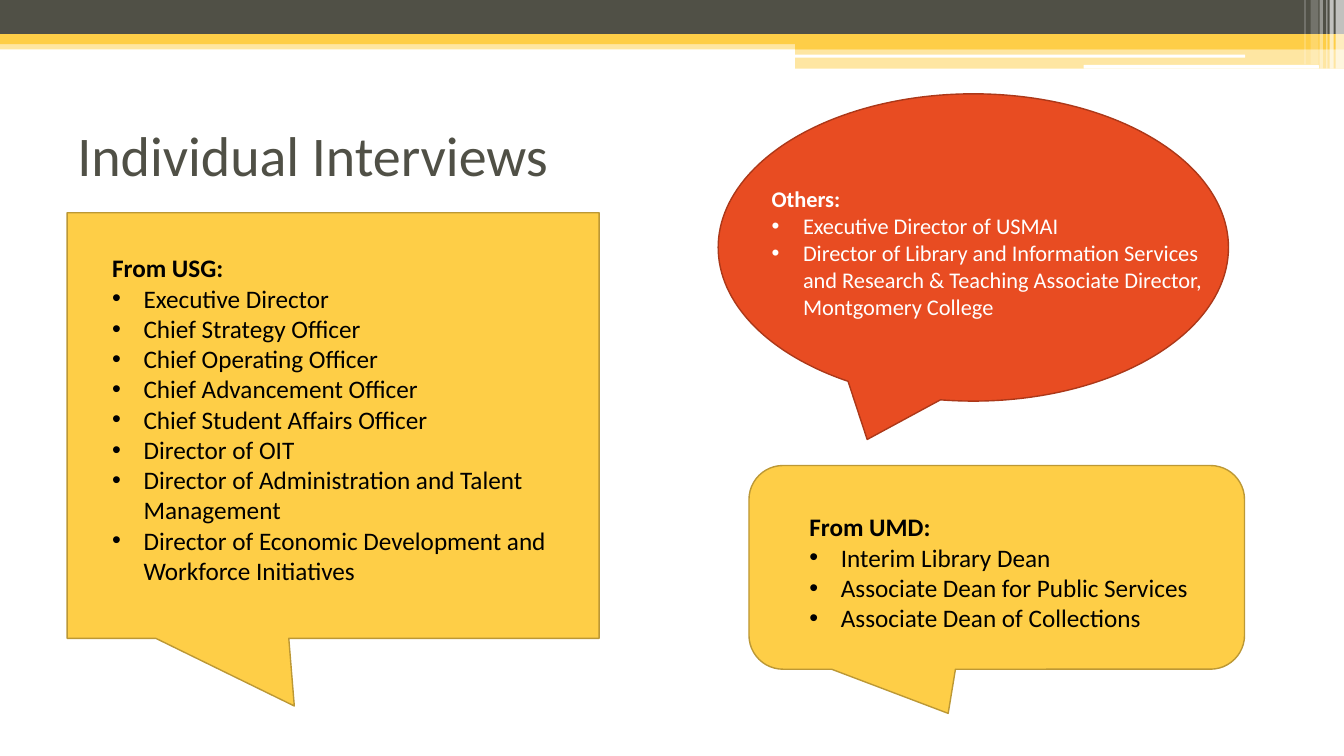
from lxml import etree
from pptx import Presentation
from pptx.dml.color import RGBColor
from pptx.enum.shapes import MSO_SHAPE as SHAPE
from pptx.enum.text import MSO_ANCHOR as ANCHOR, PP_ALIGN as ALIGN
from pptx.oxml.ns import qn
from pptx.util import Pt

GREY = RGBColor(0x50, 0x50, 0x46)
YELLOW = RGBColor(0xFE, 0xCE, 0x47)
OCHRE = RGBColor(0xBC, 0x98, 0x35)
RED = RGBColor(0xE8, 0x4C, 0x22)
DARK_RED = RGBColor(0xAC, 0x38, 0x19)
WHITE = RGBColor(0xFF, 0xFF, 0xFF)
BLACK = RGBColor(0, 0, 0)
FONT = "Calibri"
INDENT = Pt(22.5)

# left, top, width, height, colour, opacity in percent
BARS = [
    (0, 28.8, 960, 6.5, YELLOW, 50),
    (0, 0, 960, 24.4, GREY, 100),
    (0, 24.4, 960, 7.2, YELLOW, 100),
    (568, 28.1, 392, 7.2, YELLOW, 100),
    (568, 34.8, 392, 14.2, YELLOW, 50),
]
SLITS = [(567.4, 39, 322, 2.2), (774, 46.3, 168, 2.8)]
# left, width, height, opacity in percent
STRIPES = [
    (954, 6, 49, 65),
    (949.8, 2.8, 49, 65),
    (947.4, 0.8, 49, 60),
    (942.6, 2.4, 49, 40),
    (936.2, 5.6, 46, 20),
    (931.8, 0.8, 46, 30),
]

USG = ["From USG:", "Executive Director", "Chief Strategy Officer",
       "Chief Operating Officer", "Chief Advancement Officer",
       "Chief Student Affairs Officer", "Director of OIT",
       "Director of Administration and Talent Management",
       "Director of Economic Development and Workforce Initiatives"]
OTHERS = ["Others:", "Executive Director of USMAI",
          "Director of Library and Information Services and Research & "
          "Teaching Associate Director, Montgomery College"]
UMD = ["From UMD:", "Interim Library Dean",
       "Associate Dean for Public Services", "Associate Dean of Collections"]


def set_attrs(obj, **values):
    for name, value in values.items():
        setattr(obj, name, value)


def add_filled(s, kind, box, fill, line=None, opacity=100):
    sp = s.shapes.add_shape(kind, *map(Pt, box))
    sp.shadow.inherit = False
    sp.fill.solid()
    sp.fill.fore_color.rgb = fill
    if opacity < 100:
        color = sp.fill._xPr.find(qn("a:solidFill"))[0]
        etree.SubElement(color, qn("a:alpha"), val=str(opacity * 1000))
    if line is None:
        sp.line.fill.background()
    else:
        sp.line.color.rgb = line
        sp.line.width = Pt(1)
    return sp


def add_band(s, left, top):
    for x, y, w, h, color, opacity in BARS:
        add_filled(s, SHAPE.RECTANGLE, (left + x, top + y, w, h), color, opacity=opacity)
    for x, y, w, h in SLITS:
        add_filled(s, SHAPE.ROUNDED_RECTANGLE, (left + x, top + y, w, h), WHITE)
    for x, w, h, opacity in STRIPES:
        add_filled(s, SHAPE.RECTANGLE, (left + x, top, w, h), WHITE, opacity=opacity)


def add_title(s, text, box):
    sp = s.shapes.title
    set_attrs(sp, **dict(zip(("left", "top", "width", "height"), map(Pt, box))))
    tf = sp.text_frame
    set_attrs(tf, text=text, vertical_anchor=ANCHOR.MIDDLE)
    p = tf.paragraphs[0]
    p.alignment = ALIGN.LEFT
    set_attrs(p.runs[0].font, name=FONT, size=Pt(40))
    p.runs[0].font.color.rgb = GREY


def add_bullet(p):
    pPr = p._p.get_or_add_pPr()
    pPr.set("marL", str(INDENT))
    pPr.set("indent", str(-INDENT))
    etree.SubElement(pPr, qn("a:buFont"), typeface="Arial")
    etree.SubElement(pPr, qn("a:buChar"), char="•")


def add_callout(s, kind, box, tail, colors, inset, text_size, lines, size):
    """Draw a speech bubble with a bold heading and bullets, inset from its corner."""
    fill, line, ink = colors
    sp = add_filled(s, kind, box, fill, line)
    for i, value in enumerate(tail):
        sp.adjustments[i] = value
    left, top = box[0] + inset[0], box[1] + inset[1]
    tf = s.shapes.add_textbox(Pt(left), Pt(top), *map(Pt, text_size)).text_frame
    tf.word_wrap = True
    for i, text in enumerate(lines):
        p = tf.add_paragraph() if i else tf.paragraphs[0]
        if i:
            add_bullet(p)
        r = p.add_run()
        r.text = text
        set_attrs(r.font, name=FONT, size=Pt(size), bold=i == 0)
        r.font.color.rgb = ink


def main():
    prs = Presentation()
    set_attrs(prs, slide_width=Pt(960), slide_height=Pt(540))
    s = prs.slides.add_slide(prs.slide_layouts[5])
    add_band(s, 0, 0)
    add_title(s, "Individual Interviews", (48, 67.6, 864, 84.4))
    yellow = (YELLOW, OCHRE, BLACK)
    add_callout(s, SHAPE.RECTANGULAR_CALLOUT, (48, 152, 380, 304), (-0.073, 0.659),
                yellow, (25, 25), (330, 312), USG, 18)
    add_callout(s, SHAPE.OVAL_CALLOUT, (513, 67, 364.5, 219.5), (-0.208, 0.625),
                (RED, DARK_RED, WHITE), (31, 62), (333.5, 126), OTHERS, 16)
    add_callout(s, SHAPE.ROUNDED_RECTANGULAR_CALLOUT, (535, 332.5, 354, 145.5),
                (-0.098, 0.717, 0.167), yellow, (36, 29.5), (327.5, 116.5), UMD, 18)
    prs.save("out.pptx")


if __name__ == "__main__":
    main()
